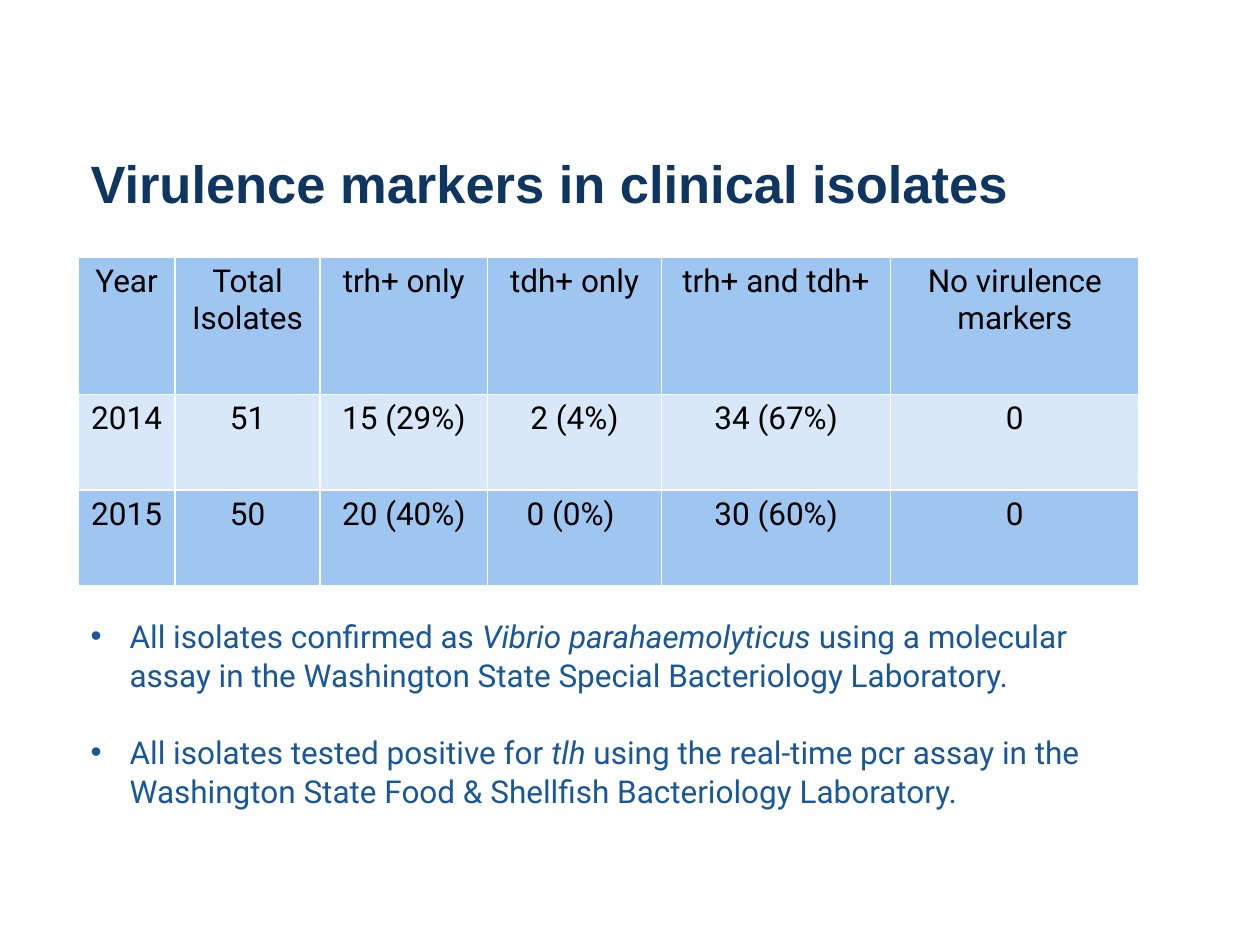
from lxml import etree
from pptx import Presentation
from pptx.dml.color import RGBColor
from pptx.enum.text import MSO_ANCHOR, PP_ALIGN
from pptx.oxml.ns import qn
from pptx.util import Inches, Pt

CENTER = PP_ALIGN.CENTER
MIDDLE, TOP = MSO_ANCHOR.MIDDLE, MSO_ANCHOR.TOP

COLORS = {
    "title": "0F3661",
    "body": "18579B",
    "cell_text": "000000",
    "band_dark": "9FC6F0",
    "band_light": "D9E8F9",
    "border": "FFFFFF",
}
LEFT, WIDTH = 0.62, 8.41

COLUMN_WIDTHS = [0.77, 1.15, 1.33, 1.38, 1.82, 1.97]
ROW_HEIGHTS = [1.09, 0.76, 0.76]
MARKER_ROWS = [
    ["Year", "Total Isolates", "trh+ only", "tdh+ only", "trh+ and tdh+", "No virulence markers"],
    ["2014", "51", "15 (29%)", "2 (4%)", "34 (67%)", "0"],
    ["2015", "50", "20 (40%)", "0 (0%) ", "30 (60%)", "0"],
]
# Each bullet is a list of (text, italic) runs
NOTES = [
    [("All isolates confirmed as ", False),
     ("Vibrio parahaemolyticus ", True),
     ("using a molecular assay in the Washington State Special Bacteriology Laboratory.", False)],
    [("All isolates tested positive for ", False),
     ("tlh", True),
     (" using the real-time pcr assay in the Washington State Food & Shellfish "
      "Bacteriology Laboratory.", False)],
]


class SlideBuilder:
    heading_font = "Arial"
    body_font = "Roboto"
    heading_size = 30
    body_size = 18

    def __init__(self, slide):
        self.slide = slide

    def format_run(self, run, font, size, color, bold=False, italic=False):
        run.font.name = font
        run.font.size = Pt(size)
        run.font.color.rgb = RGBColor.from_string(COLORS[color])
        run.font.bold = bold
        run.font.italic = italic

    def text_box(self, top, height, anchor):
        shape = self.slide.shapes.add_textbox(
            Inches(LEFT), Inches(top), Inches(WIDTH), Inches(height))
        shape.text_frame.word_wrap = True
        shape.text_frame.vertical_anchor = anchor
        return shape.text_frame

    def title(self, text, top, height):
        text_frame = self.text_box(top, height, MIDDLE)
        text_frame.text = text
        self.format_run(text_frame.paragraphs[0].runs[0], self.heading_font,
                        self.heading_size, "title", bold=True)

    def cell_borders(self, cell):
        properties = cell._tc.get_or_add_tcPr()
        for position, side in enumerate(("a:lnL", "a:lnR", "a:lnT", "a:lnB")):
            line = etree.Element(qn(side), w=str(Pt(1)))
            fill = etree.SubElement(line, qn("a:solidFill"))
            etree.SubElement(fill, qn("a:srgbClr"), val=COLORS["border"])
            properties.insert(position, line)

    def table(self, rows, top):
        table = self.slide.shapes.add_table(
            len(rows), len(COLUMN_WIDTHS), Inches(LEFT), Inches(top),
            Inches(WIDTH), Inches(sum(ROW_HEIGHTS))).table
        for column, width in zip(table.columns, COLUMN_WIDTHS):
            column.width = Inches(width)
        for row, height in zip(table.rows, ROW_HEIGHTS):
            row.height = Inches(height)
        for row_index, texts in enumerate(rows):
            band = "band_light" if row_index % 2 else "band_dark"
            for column_index, text in enumerate(texts):
                self.cell(table.cell(row_index, column_index), text, band)

    def cell(self, cell, text, band):
        cell.margin_left = cell.margin_right = Inches(0.07)
        cell.margin_top = cell.margin_bottom = Inches(0.05)
        cell.fill.solid()
        cell.fill.fore_color.rgb = RGBColor.from_string(COLORS[band])
        self.cell_borders(cell)
        cell.text_frame.text = text
        paragraph = cell.text_frame.paragraphs[0]
        paragraph.alignment = CENTER
        self.format_run(paragraph.runs[0], self.body_font, self.body_size, "cell_text")

    def bullets(self, items, top, height):
        text_frame = self.text_box(top, height, TOP)
        for index, runs in enumerate(items):
            paragraph = text_frame.add_paragraph() if index else text_frame.paragraphs[0]
            paragraph.line_spacing = 1.03
            paragraph.space_before = Pt(21.7 if index else 0)
            properties = paragraph._p.get_or_add_pPr()
            properties.set("marL", str(Inches(0.31)))
            properties.set("indent", str(Inches(-0.31)))
            etree.SubElement(properties, qn("a:buFont"), typeface="Arial")
            etree.SubElement(properties, qn("a:buChar"), char="•")
            for text, italic in runs:
                run = paragraph.add_run()
                run.text = text
                self.format_run(run, self.body_font, self.body_size, "body", italic=italic)


def main():
    presentation = Presentation()
    presentation.slide_width = Inches(10)
    presentation.slide_height = Inches(7.5)
    slide = presentation.slides.add_slide(presentation.slide_layouts[6])
    builder = SlideBuilder(slide)

    # Heading
    builder.title("Virulence markers in clinical isolates", top=1.1, height=0.69)
    # Marker counts by year
    builder.table(MARKER_ROWS, top=2.04)
    # Laboratory notes
    builder.bullets(NOTES, top=4.84, height=1.62)

    presentation.save("out.pptx")


if __name__ == "__main__":
    main()
